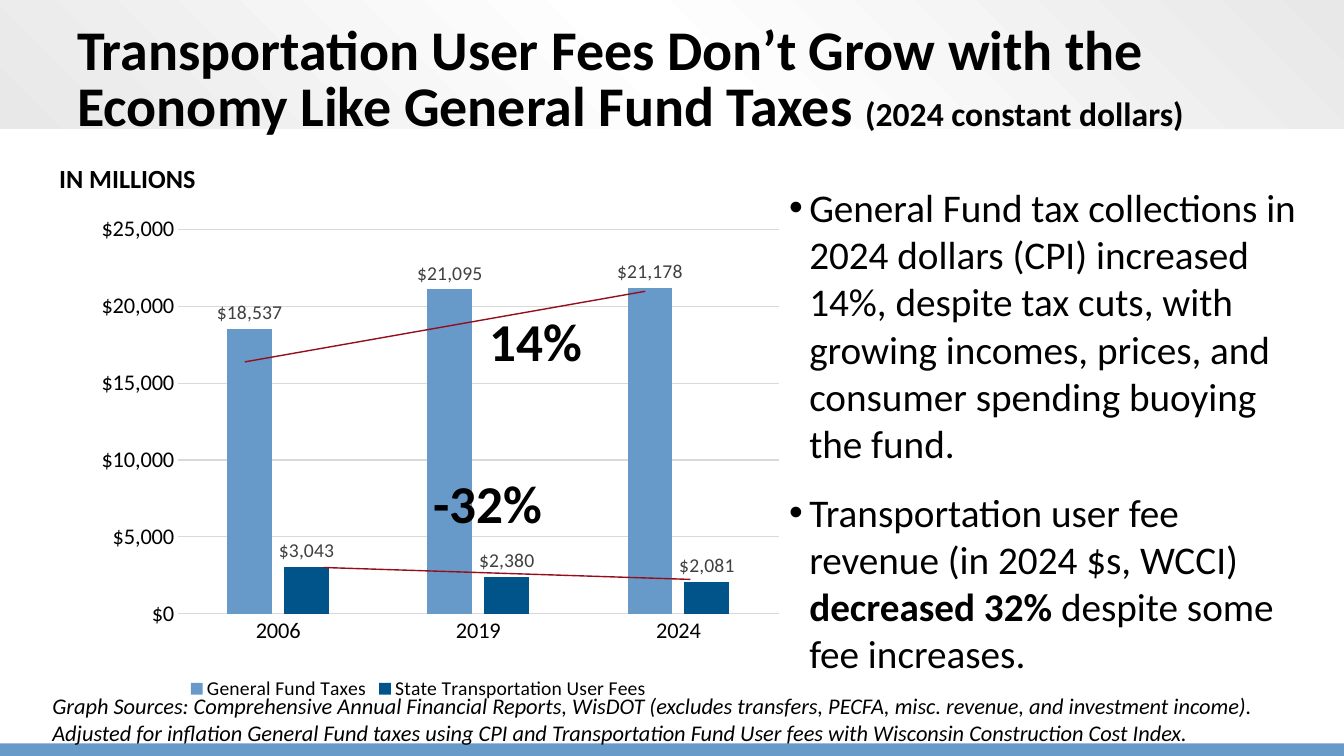
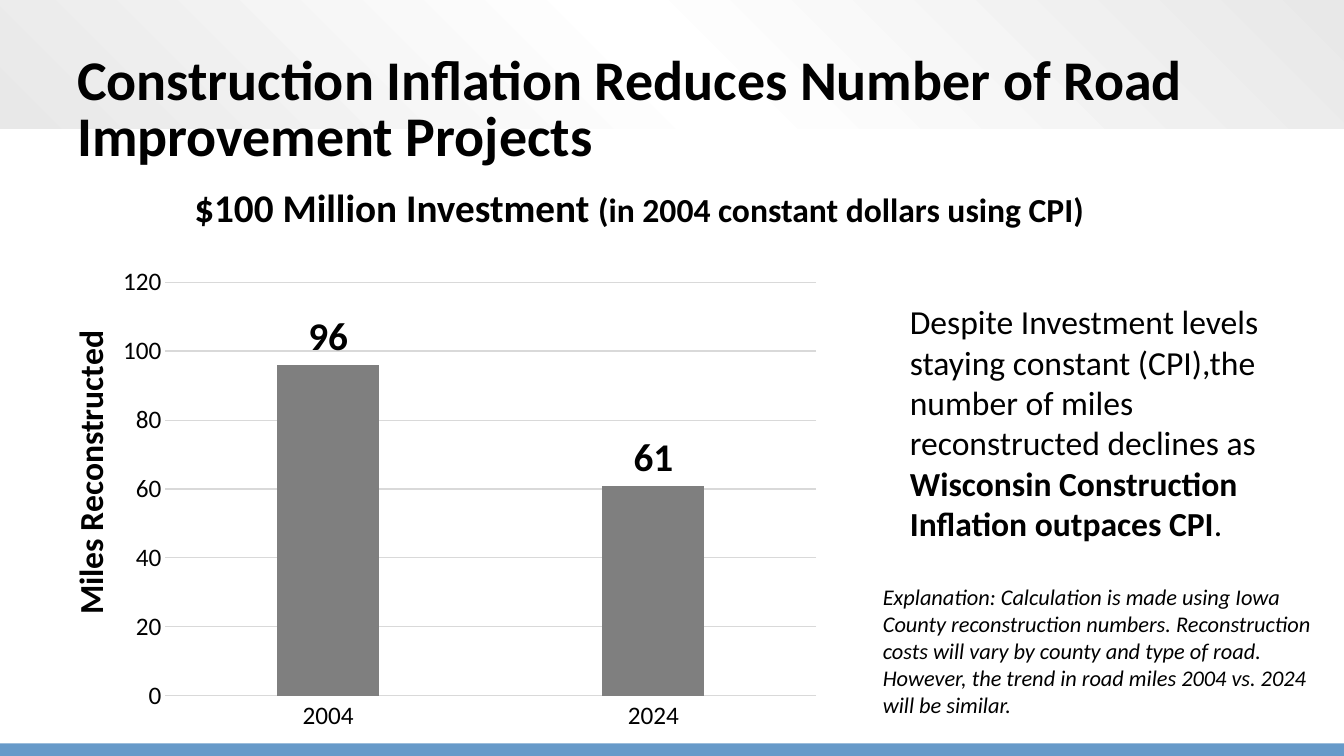
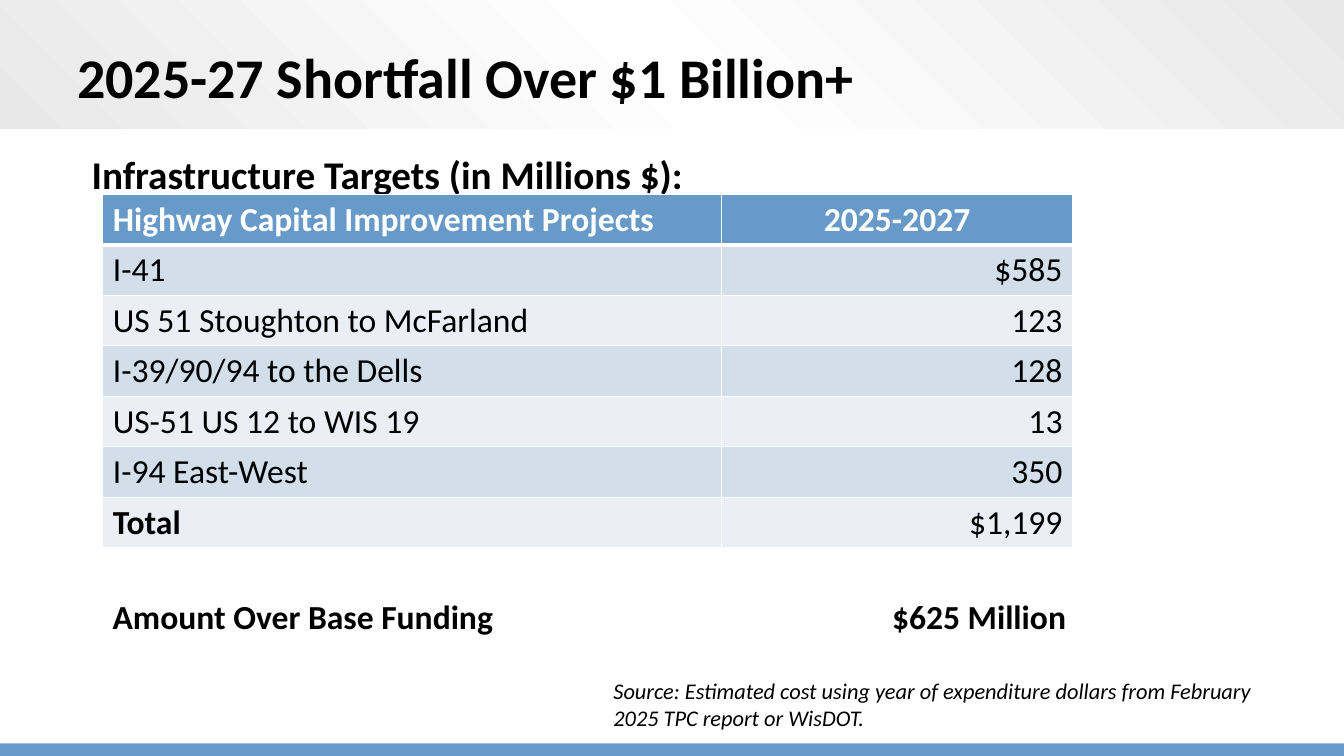
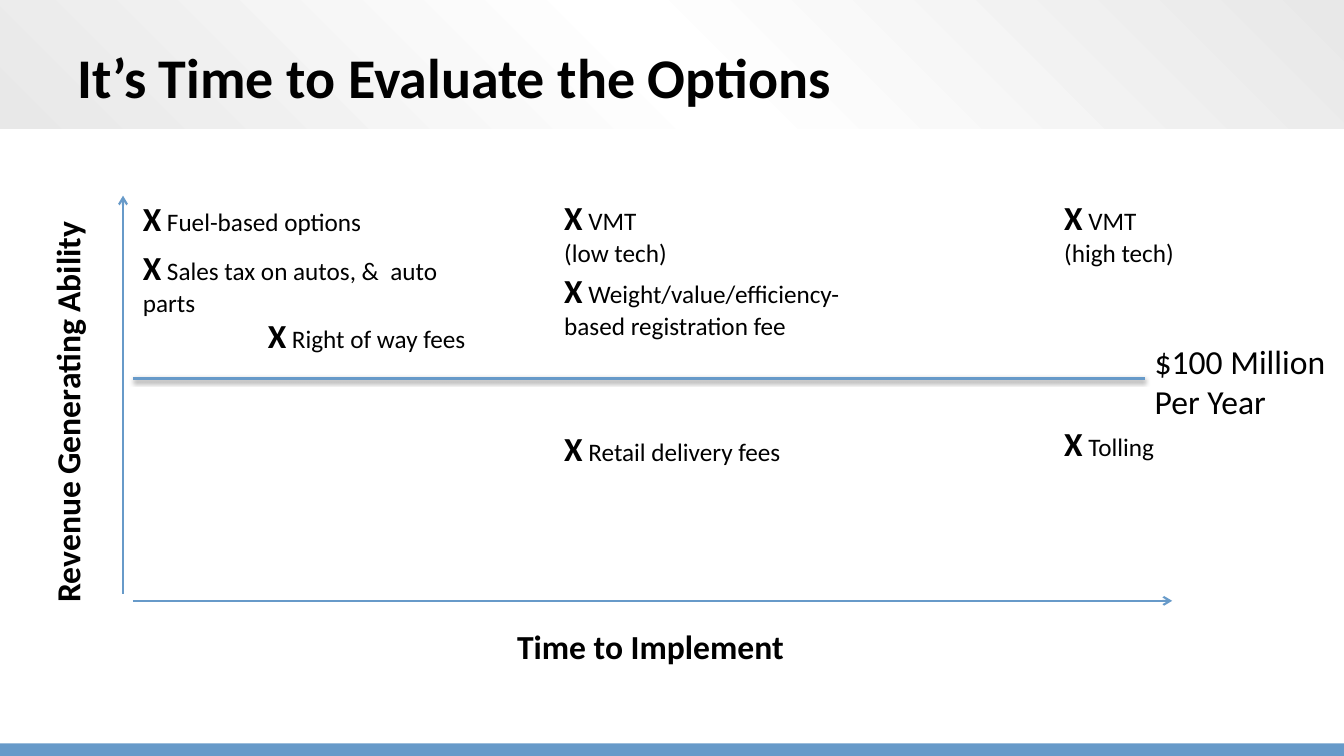
import pptx
import pptx.chart.data
import pptx.dml.color
import pptx.enum.chart
import pptx.enum.shapes
import pptx.enum.text
import pptx.oxml
import pptx.oxml.ns
import pptx.util

Cm = pptx.util.Cm
Pt = pptx.util.Pt
RGB = pptx.dml.color.RGBColor
Align = pptx.enum.text.PP_ALIGN
qn = pptx.oxml.ns.qn

BLUE = RGB(0x67, 0x9A, 0xC9)
NAVY = RGB(0x00, 0x54, 0x8A)
RED = RGB(0x95, 0x0E, 0x1B)
GREY = RGB(0x7F, 0x7F, 0x7F)
DARK = RGB(0x40, 0x40, 0x40)
RULE = RGB(0xD9, 0xD9, 0xD9)
BLACK = RGB(0, 0, 0)
WHITE = RGB(0xFF, 0xFF, 0xFF)
ODD = RGB(0xD3, 0xDE, 0xEB)
EVEN = RGB(0xEB, 0xEF, 0xF5)
FACE = "Calibri"
WIDE, HIGH = 33.87, 19.05
TITLE_ONLY, TITLE_BODY = 5, 1
DOLLARS = '"$"#,##0'

GLOW = """<a:gradFill %s rotWithShape="1"><a:gsLst>
<a:gs pos="0"><a:srgbClr val="E8E8E8"/></a:gs>
<a:gs pos="50000"><a:srgbClr val="FFFFFF"/></a:gs>
<a:gs pos="100000"><a:srgbClr val="E8E8E8"/></a:gs></a:gsLst>
<a:path path="circle"><a:fillToRect t="100000" r="100000"/></a:path></a:gradFill>"""
SHADE = """<a:effectLst %s><a:outerShdw blurRad="40000" dist="20000" dir="5400000"
rotWithShape="0"><a:srgbClr val="000000"><a:alpha val="38000"/></a:srgbClr>
</a:outerShdw></a:effectLst>"""
PLAIN = "<a:effectLst %s/>"
ARROW = '<a:tailEnd %s type="arrow"/>'
TABS = '<a:tabLst %%s><a:tab pos="%d" algn="r"/></a:tabLst>'
EDGE = """<a:%s %%s w="%d"><a:solidFill><a:srgbClr val="FFFFFF"/></a:solidFill></a:%s>"""
PLOT = """<c:layout %%s><c:manualLayout><c:layoutTarget val="inner"/>
<c:xMode val="edge"/><c:yMode val="edge"/><c:x val="%s"/><c:y val="%s"/>
<c:w val="%s"/><c:h val="%s"/></c:manualLayout></c:layout>"""


def node(xml, space="a"):
    return pptx.oxml.parse_xml(xml % pptx.oxml.ns.nsdecls(space))


def place(shape, left, top, width, height):
    shape.left, shape.top = Cm(left), Cm(top)
    shape.width, shape.height = Cm(width), Cm(height)


def style(font, size, bold=False, tint=BLACK, slant=False):
    font.name, font.size = FACE, Pt(size)
    font.bold, font.italic = bold, slant
    font.color.rgb = tint


def write(frame, paras, size, bold=False, tint=BLACK, slant=False, align=None):
    """Fill a frame; a paragraph is a string or a list of (text, size, bold) runs."""
    frame.word_wrap = True
    for index, para in enumerate(paras):
        line = frame.paragraphs[0] if index == 0 else frame.add_paragraph()
        line.alignment = align
        parts = [(para, size, bold)] if isinstance(para, str) else para
        for text, points, heavy in parts:
            run = line.add_run()
            run.text = text
            style(run.font, points, heavy, tint, slant)


class Deck:
    def __init__(self):
        self.show = pptx.Presentation()
        self.show.slide_width, self.show.slide_height = Cm(WIDE), Cm(HIGH)
        self.slide = None

    def bands(self):
        """Draw the top and bottom bands and move them to the master."""
        tree = self.show.slide_master.shapes.element
        for index, (top, height) in enumerate([(0, 3.25), (18.73, 0.32)]):
            band = self.slide.shapes.add_shape(
                pptx.enum.shapes.MSO_SHAPE.RECTANGLE, 0, Cm(top), Cm(WIDE), Cm(height))
            band.shadow.inherit = False
            band.line.fill.background()
            band.fill.solid()
            band.fill.fore_color.rgb = BLUE
            if index == 0:
                props = band.element.spPr
                props.replace(props.find(qn("a:solidFill")), node(GLOW))
            band.element.nvSpPr.cNvPr.id = 100 + index
            tree.insert(2 + index, band.element)

    def page(self, title, layout=TITLE_ONLY, top=0.48):
        self.slide = self.show.slides.add_slide(self.show.slide_layouts[layout])
        if len(self.show.slides) == 1:
            self.bands()
        head = self.slide.shapes.title
        place(head, 1.69, top, 30.48, 3.18)
        frame = head.text_frame
        write(frame, [title], 40, True, align=Align.LEFT)
        frame.auto_size = pptx.enum.text.MSO_AUTO_SIZE.NONE
        frame.vertical_anchor = pptx.enum.text.MSO_ANCHOR.MIDDLE
        frame.paragraphs[0].line_spacing = Pt(40)

    def list(self, spot, paras, size):
        body = self.slide.placeholders[1]
        place(body, *spot)
        frame = body.text_frame
        write(frame, paras, size)
        frame.auto_size = pptx.enum.text.MSO_AUTO_SIZE.NONE
        for index, line in enumerate(frame.paragraphs):
            line.space_before = Pt(16 if index else 0)
            props = line._p.get_or_add_pPr()
            props.set("marL", str(Cm(0.51)))
            props.set("indent", str(-Cm(0.51)))

    def text(self, spot, paras, size, turn=0, **look):
        box = self.slide.shapes.add_textbox(*map(Cm, spot))
        box.rotation = turn
        write(box.text_frame, paras, size, **look)
        return box

    def line(self, start, end, tint, width, arrow=False, shade=False):
        rule = self.slide.shapes.add_connector(
            pptx.enum.shapes.MSO_CONNECTOR.STRAIGHT, *map(Cm, start + end))
        rule.line.color.rgb, rule.line.width = tint, Pt(width)
        if arrow:
            rule.line._get_or_add_ln().append(node(ARROW))
        rule.element.spPr.append(node(SHADE if shade else PLAIN))

    def chart(self, spot, cats, series, top, size, marks, form="General"):
        """Draw columns; series holds (name, values, colour), marks the label style."""
        data = pptx.chart.data.CategoryChartData()
        data.categories = cats
        for name, values, _ in series:
            data.add_series(name, values)
        chart = self.slide.shapes.add_chart(
            pptx.enum.chart.XL_CHART_TYPE.COLUMN_CLUSTERED, *map(Cm, spot), data).chart
        style(chart.font, 10)
        chart.has_title = chart.has_legend = False
        plot = chart.plots[0]
        plot.gap_width, plot.overlap, plot.vary_by_categories = 219, -27, False
        for item, (_, _, tint) in zip(plot.series, series):
            item.format.fill.solid()
            item.format.fill.fore_color.rgb = tint
            labels = item.data_labels
            labels.show_value = True
            labels.position = pptx.enum.chart.XL_LABEL_POSITION.OUTSIDE_END
            labels.number_format, labels.number_format_is_linked = form, False
            style(labels.font, *marks)
        scale = chart.value_axis
        for axis in (chart.category_axis, scale):
            axis.major_tick_mark = pptx.enum.chart.XL_TICK_MARK.NONE
            style(axis.tick_labels.font, size)
        scale.minimum_scale, scale.maximum_scale = 0, top
        scale.tick_labels.number_format = form
        scale.tick_labels.number_format_is_linked = False
        scale.format.line.fill.background()
        for edge in (chart.category_axis.format.line, scale.major_gridlines.format.line):
            edge.color.rgb, edge.width = RULE, Pt(0.75)
        return chart

    def table(self, left, top, widths, height, rows):
        grid = self.slide.shapes.add_table(
            len(rows), len(widths), Cm(left), Cm(top),
            Cm(sum(widths)), Cm(height * len(rows))).table
        for column, width in zip(grid.columns, widths):
            column.width = Cm(width)
        for r, row in enumerate(rows):
            grid.rows[r].height = Cm(height)
            for c, text in enumerate(row):
                cell = grid.cell(r, c)
                align = Align.LEFT if c == 0 else Align.RIGHT if r else Align.CENTER
                write(cell.text_frame, [text], 24, r == 0 or text == "Total",
                      BLACK if r else WHITE, align=align)
                props = cell._tc.get_or_add_tcPr()
                for side in ("lnL", "lnR", "lnT", "lnB"):
                    thick = (side == "lnB" and r == 0) or (side == "lnT" and r == 1)
                    props.append(node(EDGE % (side, Pt(3 if thick else 1), side)))
                cell.fill.solid()
                cell.fill.fore_color.rgb = BLUE if r == 0 else ODD if r % 2 else EVEN


def fees(deck):
    deck.page([("Transportation User Fees Don’t Grow with the Economy Like "
                "General Fund Taxes ", 40, True),
               ("(2024 constant dollars)", 24, True)], TITLE_BODY)
    chart = deck.chart(
        (1.45, 5.11, 18.19, 12.65), ["2006", "2019", "2024"],
        [("General Fund Taxes", (18537, 21095, 21178), BLUE),
         ("State Transportation User Fees", (3043, 2380, 2081), NAVY)],
        25000, 16, (14, False, DARK), DOLLARS)
    chart.has_legend = True
    chart.legend.position = pptx.enum.chart.XL_LEGEND_POSITION.BOTTOM
    chart.legend.include_in_layout = False
    style(chart.legend.font, 14)
    area = chart.plots[0]._element.getparent()
    for old in area.findall(qn("c:layout")):
        area.remove(old)
    area.insert(0, node(PLOT % (0.167, 0.053, 0.832, 0.766), "c"))
    deck.text((10.67, 11.73, 3.51, 1.88), ["-32%"], 38, bold=True)
    deck.text((12.09, 7.65, 4.17, 1.88), ["14%"], 38, bold=True)
    deck.list((19.63, 4.5, 13.28, 12.8), [
        "General Fund tax collections in 2024 dollars (CPI) increased 14%, despite tax "
        "cuts, with growing incomes, prices, and consumer spending buoying the fund.",
        [("Transportation user fee revenue (in 2024 $s, WCCI) ", 28, False),
         ("decreased 32% ", 28, True), ("despite some fee increases.", 28, False)]], 28)
    deck.text((1.07, 17.32, 32.74, 1.63), [
        "Graph Sources: Comprehensive Annual Financial Reports, WisDOT (excludes "
        "transfers, PECFA, misc. revenue, and investment income). Adjusted for inflation "
        "General Fund taxes using CPI and Transportation Fund User fees with Wisconsin "
        "Construction Cost Index."], 16, slant=True)
    unit = deck.text((1.24, 3.96, 4.52, 1.07), ["IN MILLIONS"], 18.7, bold=True)
    unit.fill.solid()
    unit.fill.fore_color.rgb = WHITE
    deck.line((6.17, 9.12), (16.26, 7.34), RED, 1)
    deck.line((8.15, 14.3), (17.4, 14.6), RED, 1)


def miles(deck):
    deck.page("Construction Inflation Reduces Number of Road Improvement Projects", top=1.22)
    deck.text((1.96, 4.5, 28.3, 1.45), [
        [("$100 Million Investment ", 28, True),
         ("(in 2004 constant dollars using CPI)", 24, True)]], 28, align=Align.CENTER)
    deck.chart((2.74, 6.48, 18.19, 12.17), ["2004", "2024"],
               [("Series 1", (96, 61), GREY)], 120, 18, (28, True))
    deck.text((-2.64, 10.21, 9.8, 1.27), ["Miles Reconstructed"], 24, 270, bold=True)
    deck.text((22.68, 7.47, 9.47, 6.4), [
        [("Despite Investment levels staying constant (CPI),the number of miles "
          "reconstructed declines as ", 24, False),
         ("Wisconsin Construction Inflation outpaces CPI", 24, True),
         (".", 24, False)]], 24)
    deck.text((22, 14.58, 11.86, 3.68), [
        "Explanation: Calculation is made using Iowa County reconstruction numbers. "
        "Reconstruction costs will vary by county and type of road. However, the trend "
        "in road miles 2004 vs. 2024 will be similar."], 16, slant=True)


def gap(deck):
    deck.page("2025-27 Shortfall Over $1 Billion+")
    deck.text((2.06, 3.66, 29.21, 1.6), ["Infrastructure Targets (in Millions $):"],
              28, bold=True)
    deck.table(2.59, 4.9, (15.6, 8.84), 1.27, [
        ("Highway Capital Improvement Projects", "2025-2027"),
        ("I-41", "$585"),
        ("US 51 Stoughton to McFarland", "123"),
        ("I-39/90/94 to the Dells", "128"),
        ("US-51 US 12 to WIS 19", "13"),
        ("I-94 East-West", "350"),
        ("Total", "$1,199")])
    deck.text((15.21, 16.94, 16.97, 1.63), [
        "Source: Estimated cost using year of expenditure dollars from February 2025 "
        "TPC report or WisDOT."], 16, slant=True)
    over = deck.text((2.59, 14.88, 25.98, 1.27),
                     ["Amount Over Base Funding\t$625 Million"], 24, bold=True)
    props = over.text_frame.paragraphs[0]._p.get_or_add_pPr()
    props.append(node(TABS % Cm(24.03)))


def options(deck):
    deck.page("It’s Time to Evaluate the Options")
    deck.line((3.35, 15.14), (29.54, 15.14), BLUE, 1.5, arrow=True)
    deck.line((3.1, 14.96), (3.1, 4.93), BLUE, 1.5, arrow=True)
    deck.text((-3.86, 8.46, 11.89, 2.06), ["Revenue Generating Ability"], 24, 270, bold=True)
    deck.text((12.78, 15.65, 11.89, 2.06), ["Time to Implement"], 24, bold=True)
    deck.line((3.35, 9.53), (28.85, 9.53), BLUE, 2, shade=True)
    deck.text((28.85, 8.46, 4.9, 2.31), ["$100 Million", "Per Year"], 24)
    soon, mid, late = 3.35, 13.97, 26.57
    for left, top, width, first, *rest in [
            (soon, 4.85, 6.53, "Fuel-based options"),
            (soon, 6.1, 9.12, "Sales tax on autos, &  auto parts"),
            (6.5, 7.82, 5.99, "Right of way fees"),
            (mid, 4.83, 6.22, "VMT", "(low tech)"),
            (mid, 6.68, 8.61, "Weight/value/efficiency-based registration fee"),
            (mid, 10.67, 5.99, "Retail delivery fees"),
            (late, 4.83, 6.22, "VMT", "(high tech)"),
            (late, 10.54, 5.61, "Tolling")]:
        deck.text((left, top, width, 2.06 if rest else 1.27),
                  [[("X", 24, True), (" " + first, 18, False)], *rest], 18)


def main():
    deck = Deck()
    for build in (fees, miles, gap, options):
        build(deck)
    deck.show.save("out.pptx")


if __name__ == "__main__":
    main()
